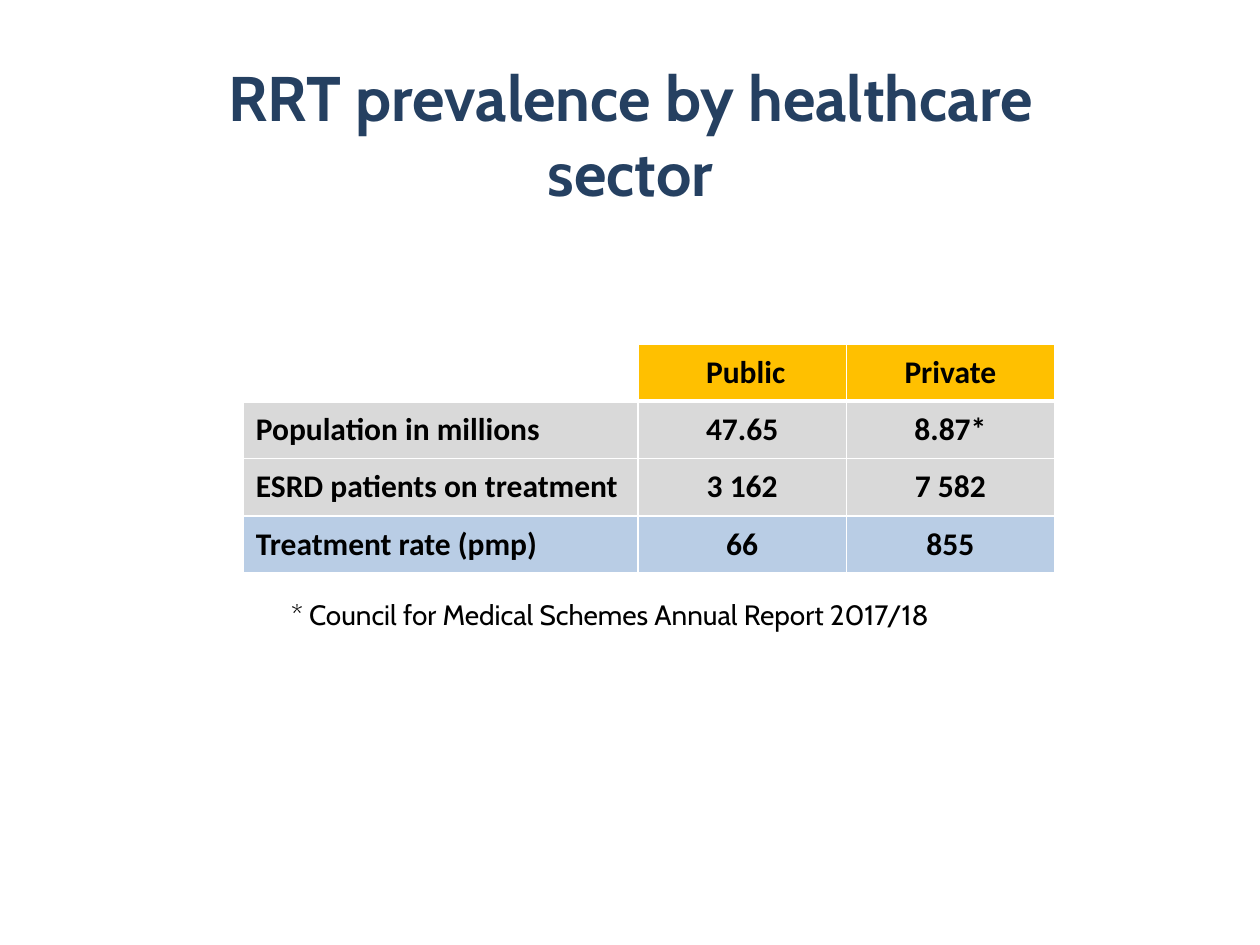
import dataclasses
import typing

import pptx
import pptx.dml.color
import pptx.enum.text
import pptx.oxml
import pptx.oxml.ns
import pptx.util

Pt = pptx.util.Pt
Align = pptx.enum.text.PP_ALIGN
Anchor = pptx.enum.text.MSO_ANCHOR
AutoSize = pptx.enum.text.MSO_AUTO_SIZE

COLORS = {
    "title": "254061",
    "text": "000000",
    "border": "FFFFFF",
    "header": "FFC000",
    "data": "D9D9D9",
    "rate": "B9CDE5",
}
TITLE_FONT = {"name": "Cabin", "size": Pt(36), "bold": True}
TABLE_FONT = {"name": "Calibri", "size": Pt(18), "bold": True}
NOTE_FONT = {"name": "Cabin", "size": Pt(16), "bold": False}

COLUMN_WIDTHS = (225.6, 119, 119)
ROW_HEIGHT = 32.75


@dataclasses.dataclass
class TableRow:
    texts: tuple[str, str, str]
    fill: str
    bottom_border: float = 1


ROWS = [
    TableRow(("", " Public", "Private"), "header", bottom_border=3),
    TableRow(("Population in millions", "47.65", "8.87*"), "data"),
    TableRow(("ESRD patients on treatment", "3 162", "7 582"), "data"),
    TableRow(("Treatment rate (pmp)", "66", "855"), "rate"),
]


def rgb(color: str) -> pptx.dml.color.RGBColor:
    return pptx.dml.color.RGBColor.from_string(COLORS[color])


def set_attributes(target: typing.Any, values: dict[str, typing.Any]) -> None:
    for name, value in values.items():
        setattr(target, name, value)


def write_text(frame: typing.Any, text: str, font: dict[str, typing.Any],
               color: str, alignment: Align) -> None:
    paragraph = frame.paragraphs[0]
    paragraph.alignment = alignment
    run = paragraph.add_run()
    run.text = text
    set_attributes(run.font, font)
    run.font.color.rgb = rgb(color)


def place(shape: typing.Any, left: float, top: float,
          width: float, height: float) -> None:
    box = {"left": left, "top": top, "width": width, "height": height}
    set_attributes(shape, {name: Pt(value) for name, value in box.items()})


def add_borders(cell: typing.Any, bottom: float) -> None:
    properties = cell._tc.get_or_add_tcPr()
    for side, width in {"L": 1, "R": 1, "T": 1, "B": bottom}.items():
        properties.append(pptx.oxml.parse_xml(
            f'<a:ln{side} {pptx.oxml.ns.nsdecls("a")} w="{Pt(width)}">'
            f'<a:solidFill><a:srgbClr val="{COLORS["border"]}"/></a:solidFill>'
            f'</a:ln{side}>'))


def add_data_table(slide: typing.Any, left: float, top: float) -> None:
    frame = slide.shapes.add_table(
        len(ROWS), len(COLUMN_WIDTHS), Pt(left), Pt(top),
        Pt(sum(COLUMN_WIDTHS)), Pt(ROW_HEIGHT * len(ROWS)))
    table = frame.table
    set_attributes(table, {"first_row": False, "horz_banding": False})
    for column, width in zip(table.columns, COLUMN_WIDTHS):
        column.width = Pt(width)

    for row_index, row in enumerate(ROWS):
        table.rows[row_index].height = Pt(ROW_HEIGHT)
        for column_index, text in enumerate(row.texts):
            cell = table.cell(row_index, column_index)
            cell.vertical_anchor = Anchor.MIDDLE
            # The row above draws the shared edge, so it must agree on width
            add_borders(cell, row.bottom_border)
            if not text:
                cell.fill.background()
                continue
            cell.fill.solid()
            cell.fill.fore_color.rgb = rgb(row.fill)
            alignment = Align.CENTER if column_index else Align.LEFT
            write_text(cell.text_frame, text, TABLE_FONT, "text", alignment)


def main() -> None:
    presentation = pptx.Presentation()
    set_attributes(presentation, {"slide_width": Pt(720), "slide_height": Pt(540)})
    slide = presentation.slides.add_slide(presentation.slide_layouts.get_by_name("Title Only"))

    # Table
    add_data_table(slide, 139, 196.5)

    # Title
    title = slide.shapes.title
    place(title, 76.25, 31.5, 568, 90)
    set_attributes(title.text_frame, {
        "word_wrap": True, "auto_size": AutoSize.NONE, "vertical_anchor": Anchor.MIDDLE})
    write_text(title.text_frame, "RRT prevalence by healthcare sector",
               TITLE_FONT, "title", Align.CENTER)

    # Source note
    note = slide.shapes.add_textbox(Pt(137), Pt(337.75), Pt(401), Pt(26.5))
    set_attributes(note.text_frame, {
        "word_wrap": True, "auto_size": AutoSize.SHAPE_TO_FIT_TEXT})
    write_text(note.text_frame, "* Council for Medical Schemes Annual Report 2017/18",
               NOTE_FONT, "text", Align.RIGHT)

    presentation.save("out.pptx")


if __name__ == "__main__":
    main()
